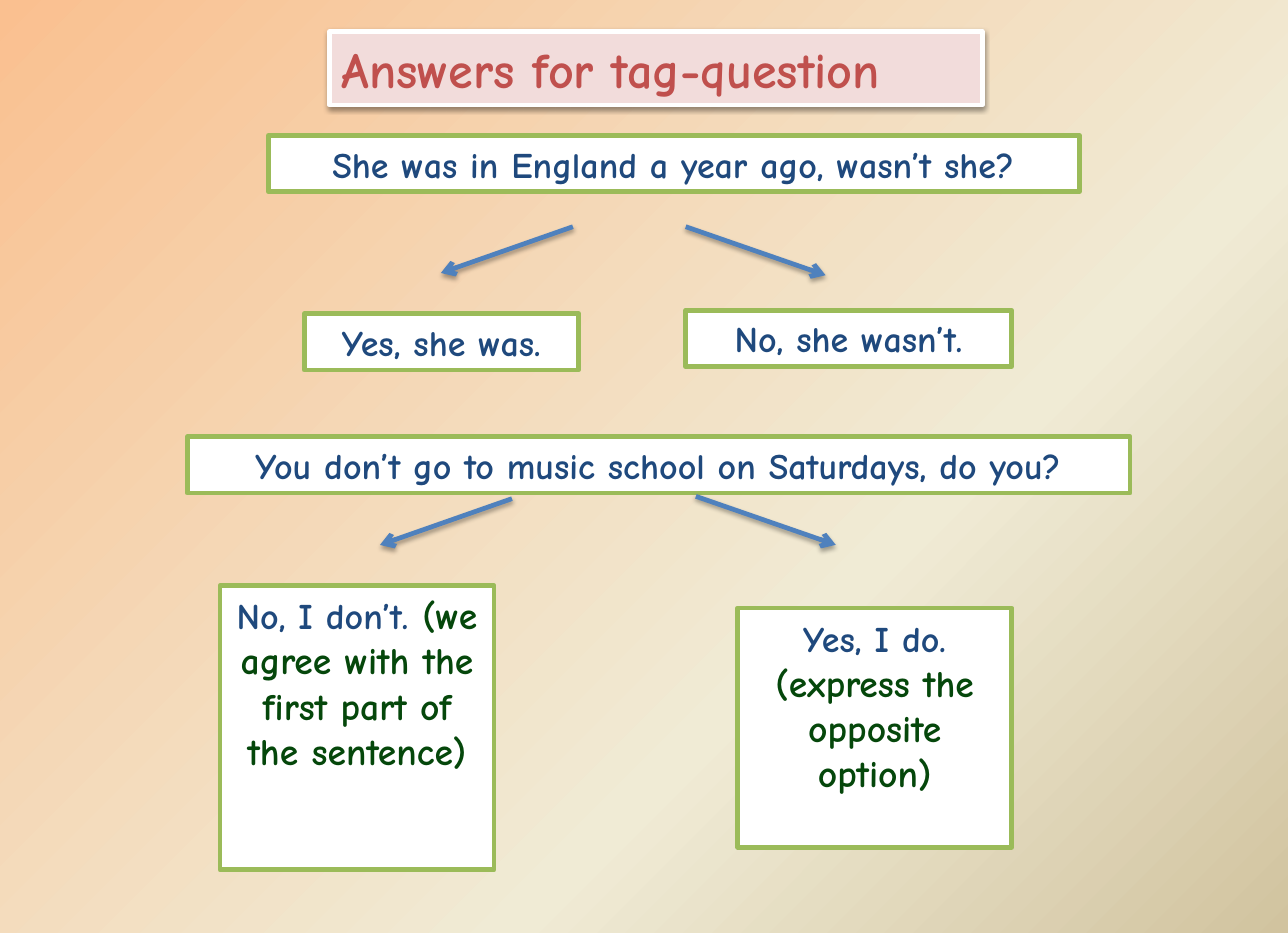
from dataclasses import dataclass

from lxml import etree
from pptx import Presentation, util as u
from pptx.dml.color import RGBColor
from pptx.enum import shapes, text
from pptx.oxml.ns import qn

WIDTH, HEIGHT = u.Inches(11.42), u.Inches(8.27)
FONT = "Comic Neue"
COLORS = {
    "title": "C0504D", "title_fill": "F2DCDB", "white": "FFFFFF",
    "border": "9BBB59", "sentence": "1F497D", "remark": "05470B",
    "arrow": "4F81BD", "shadow": "000000",
}
BACKGROUND = [(0, "FAC090"), (65, "F0EBD5"), (100, "D1C39F")]

# Lengths are percentages of the slide's width (x, w) and height (y, h)
ROW_H = 6.05
ANSWER_W = 21.28
LEFT_REACH = (-10.25, 4.96)
RIGHT_REACH = (10.86, 5.2)


@dataclass
class Box:
    x: float
    y: float
    w: float
    h: float
    sentence: str
    remark: str = ""
    size: int = 23
    ink: str = "sentence"
    fill: str = "white"
    border: str = "border"
    is_title: bool = False


@dataclass
class Arrow:
    x: float
    y: float
    reach: tuple[float, float]


BOXES = [
    Box(25.57, 3.39, 50.7, 7.86, "Answers for tag-question", size=32,
        ink="title", fill="title_fill", border="white", is_title=True),
    Box(20.84, 14.51, 62.96, ROW_H, "She was in England a year ago, wasn’t she?"),
    Box(23.64, 33.62, ANSWER_W, ROW_H, "Yes, she was."),
    Box(53.24, 33.25, 25.31, ROW_H, "No, she wasn’t."),
    Box(14.54, 46.8, 73.2, ROW_H, "You don’t go to music school on Saturdays, do you?"),
    Box(17.08, 62.76, ANSWER_W, 30.47, "No, I don’t.",
        " (we agree with the first part of the sentence)"),
    Box(57.27, 65.18, ANSWER_W, 25.63, "Yes, I do.", " (express the opposite option)"),
]
ARROWS = [
    Arrow(44.48, 24.3, LEFT_REACH), Arrow(53.24, 24.3, RIGHT_REACH),
    Arrow(39.75, 53.45, LEFT_REACH), Arrow(54.03, 53.2, RIGHT_REACH),
]


def rgb(name: str) -> RGBColor:
    return RGBColor.from_string(COLORS[name])


def across(share: float) -> int:
    return round(WIDTH * share / 100)


def down(share: float) -> int:
    return round(HEIGHT * share / 100)


def add_color(parent, value: str):
    return etree.SubElement(parent, qn("a:srgbClr"), val=value)


def add_shadow(sp, distance: float, opacity: int) -> None:
    props = sp._element.spPr
    effects = props.find(qn("a:effectLst"))
    if effects is None:
        effects = etree.SubElement(props, qn("a:effectLst"))
    shadow = etree.SubElement(
        effects, qn("a:outerShdw"), blurRad=str(u.Pt(3.1)),
        dist=str(u.Pt(distance)), dir="5400000", rotWithShape="0")
    color = add_color(shadow, COLORS["shadow"])
    etree.SubElement(color, qn("a:alpha"), val=str(opacity * 1000))


def paint_background(s) -> None:
    fill = s.background.fill
    fill.gradient()
    fill.gradient_angle = 315
    stops = next(s._element.iter(qn("a:gsLst")))
    for stop in list(stops):
        stops.remove(stop)
    for position, value in BACKGROUND:
        add_color(etree.SubElement(stops, qn("a:gs"), pos=str(position * 1000)), value)


def add_box(s, box: Box) -> None:
    sp = s.shapes.add_shape(shapes.MSO_SHAPE.RECTANGLE, across(box.x), down(box.y),
                            across(box.w), down(box.h))
    sp.fill.solid()
    sp.fill.fore_color.rgb = rgb(box.fill)
    sp.line.color.rgb = rgb(box.border)
    sp.line.width = u.Pt(3)
    sp.shadow.inherit = False
    if box.is_title:
        add_shadow(sp, 1.6, 38)

    tf = sp.text_frame
    tf.margin_left = tf.margin_right = u.Inches(0.11)
    tf.margin_top = tf.margin_bottom = u.Inches(0.06)
    tf.vertical_anchor = text.MSO_ANCHOR.TOP
    tf.word_wrap = not box.is_title
    tf.auto_size = text.MSO_AUTO_SIZE.SHAPE_TO_FIT_TEXT
    p = tf.paragraphs[0]
    p.alignment = text.PP_ALIGN.LEFT if box.is_title else text.PP_ALIGN.CENTER
    p.font.name, p.font.bold = FONT, True
    for words, size, ink in ((box.sentence, box.size, box.ink),
                             (box.remark, 24, "remark")):
        if words:
            r = p.add_run()
            r.text = words
            r.font.size = u.Pt(size)
            r.font.color.rgb = rgb(ink)


def add_arrow(s, arrow: Arrow) -> None:
    dx, dy = arrow.reach
    sp = s.shapes.add_connector(
        shapes.MSO_CONNECTOR.STRAIGHT, across(arrow.x), down(arrow.y),
        across(arrow.x + dx), down(arrow.y + dy))
    sp.line.color.rgb = rgb("arrow")
    sp.line.width = u.Pt(3)
    etree.SubElement(sp._element.spPr.find(qn("a:ln")), qn("a:tailEnd"), type="arrow")
    add_shadow(sp, 1.8, 35)


def main() -> None:
    prs = Presentation()
    prs.slide_width, prs.slide_height = WIDTH, HEIGHT
    s = prs.slides.add_slide(prs.slide_layouts[6])
    paint_background(s)

    # Title, questions and their answers
    for box in BOXES:
        add_box(s, box)

    # Arrows from each question to its two answers
    for arrow in ARROWS:
        add_arrow(s, arrow)

    prs.save("out.pptx")


if __name__ == "__main__":
    main()
